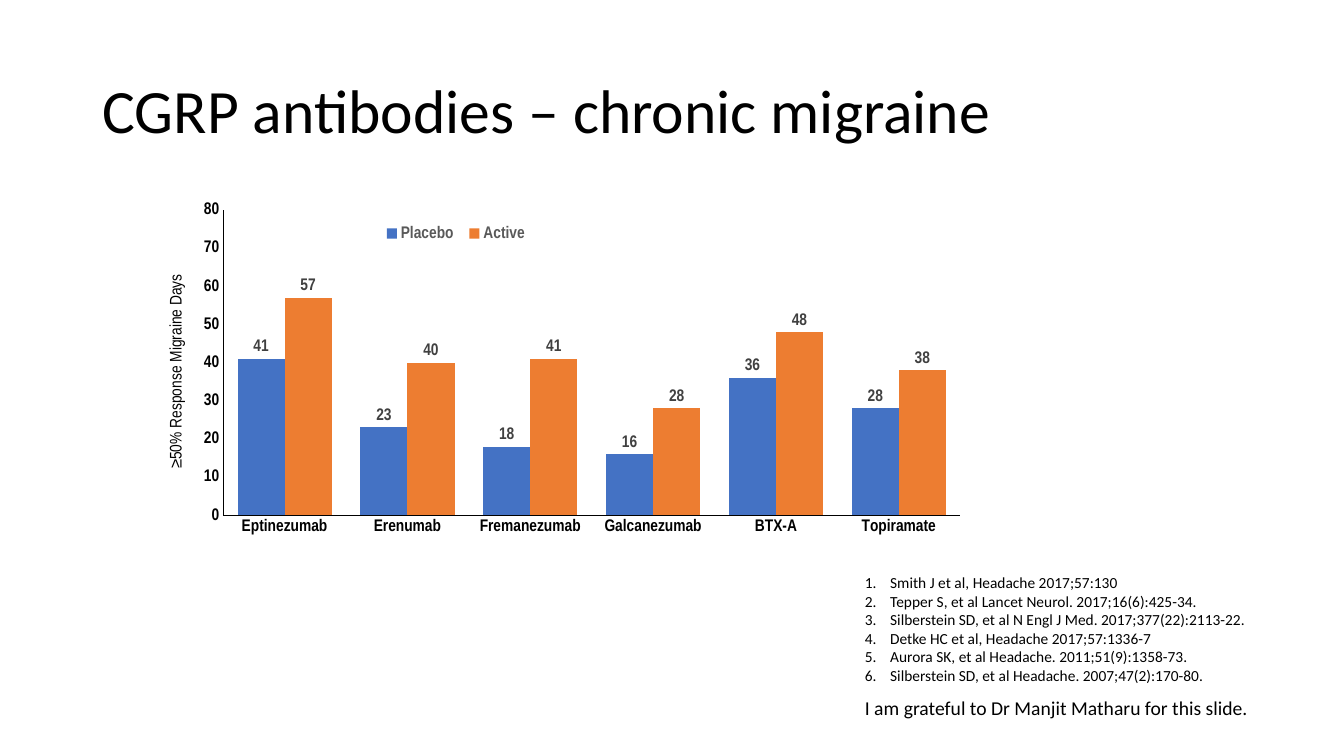
from lxml import etree
from pptx import Presentation
from pptx.chart.data import CategoryChartData
from pptx.dml.color import RGBColor
from pptx.enum.chart import XL_CHART_TYPE as ChartType
from pptx.enum.chart import XL_LABEL_POSITION as LabelPosition
from pptx.enum.chart import XL_LEGEND_POSITION as LegendPosition
from pptx.enum.chart import XL_TICK_MARK as TickMark
from pptx.enum.text import MSO_ANCHOR, MSO_AUTO_SIZE
from pptx.oxml.ns import qn
from pptx.util import Inches, Pt

RESPONSE = {
    "Eptinezumab": (41, 57),
    "Erenumab": (23, 40),
    "Fremanezumab": (18, 41),
    "Galcanezumab": (16, 28),
    "BTX-A": (36, 48),
    "Topiramate": (28, 38),
}
ARMS = {"Placebo": "4472C4", "Active": "ED7D31"}
REFERENCES = [
    "Smith J et al, Headache 2017;57:130",
    "Tepper S, et al Lancet Neurol. 2017;16(6):425-34.",
    "Silberstein SD, et al N Engl J Med. 2017;377(22):2113-22.",
    "Detke HC et al, Headache 2017;57:1336-7",
    "Aurora SK, et al Headache. 2011;51(9):1358-73.",
    "Silberstein SD, et al Headache. 2007;47(2):170-80.",
]


def color(value):
    return RGBColor.from_string(value)


def place(element, index, **fractions):
    for old in element.findall(qn("c:layout")):
        element.remove(old)
    layout = etree.Element(qn("c:layout"))
    manual = etree.SubElement(layout, qn("c:manualLayout"))
    if "w" in fractions and index == 0:
        etree.SubElement(manual, qn("c:layoutTarget")).set("val", "inner")
    for side in ("x", "y"):
        etree.SubElement(manual, qn(f"c:{side}Mode")).set("val", "edge")
    for side, fraction in fractions.items():
        etree.SubElement(manual, qn(f"c:{side}")).set("val", str(fraction))
    element.insert(index, layout)


class SlideBuilder:
    text_font = "Calibri"
    chart_font = "Arial Narrow"
    ink = "000000"

    def __init__(self, deck):
        self.slide = deck.slides.add_slide(deck.slide_layouts[6])

    def style(self, font, size, name, value=ink, bold=False):
        font.size = Pt(size)
        font.name = name
        font.bold = bold
        font.color.rgb = color(value)

    def text(self, area, lines, size, wrap=True, grow=True, numbered=False):
        box = self.slide.shapes.add_textbox(*map(Inches, area))
        frame = box.text_frame
        frame.text = "\n".join(lines)
        frame.word_wrap = wrap
        frame.auto_size = MSO_AUTO_SIZE.SHAPE_TO_FIT_TEXT if grow else MSO_AUTO_SIZE.NONE
        for para in frame.paragraphs:
            if numbered:
                self.number(para)
            for span in para.runs:
                self.style(span.font, size, self.text_font)
        return frame

    def number(self, para):
        properties = para._p.get_or_add_pPr()
        properties.set("marL", str(Inches(0.25)))
        properties.set("indent", str(Inches(-0.25)))
        etree.SubElement(properties, qn("a:buFont")).set("typeface", "+mj-lt")
        etree.SubElement(properties, qn("a:buAutoNum")).set("type", "arabicPeriod")

    def title(self, area, words):
        frame = self.text(area, [words], 44, grow=False)
        frame.vertical_anchor = MSO_ANCHOR.MIDDLE
        frame.paragraphs[0].line_spacing = 0.9

    def axis(self, axis):
        axis.has_major_gridlines = False
        axis.major_tick_mark = TickMark.NONE
        axis.minor_tick_mark = TickMark.NONE
        axis.format.line.color.rgb = color(self.ink)
        axis.format.line.width = Pt(0.75)
        self.style(axis.tick_labels.font, 12, self.chart_font, bold=True)

    def column_chart(self, area, axis_title):
        data = CategoryChartData()
        data.categories = list(RESPONSE)
        for arm, values in zip(ARMS, zip(*RESPONSE.values())):
            data.add_series(arm, values)
        chart = self.slide.shapes.add_chart(
            ChartType.COLUMN_CLUSTERED, *map(Inches, area), data
        ).chart
        self.style(chart.font, 10, self.text_font)
        chart.has_title = False
        place(chart.plots[0]._element.getparent(), 0, x=0.096, y=0.038, w=0.884, h=0.806)
        self.axis(chart.category_axis)
        self.axis(chart.value_axis)
        self.scale(chart.value_axis, axis_title)
        self.legend(chart)
        self.columns(chart.plots[0])

    def scale(self, axis, words):
        axis.minimum_scale = 0
        axis.maximum_scale = 80
        axis.major_unit = 10
        title = axis.axis_title
        title.text_frame.text = words
        span = title.text_frame.paragraphs[0].runs[0]
        self.style(span.font, 12, self.chart_font)
        place(title._element, 1, x=0.025, y=0.2)

    def legend(self, chart):
        chart.has_legend = True
        legend = chart.legend
        legend.position = LegendPosition.BOTTOM
        legend.include_in_layout = False
        self.style(legend.font, 12, self.chart_font, "595959", True)
        place(legend._element, 1, x=0.28, y=0.06, w=0.19, h=0.08)

    def columns(self, plot):
        plot.gap_width = 61
        plot.overlap = 0
        plot.vary_by_categories = False
        for series, fill in zip(plot.series, ARMS.values()):
            series.format.fill.solid()
            series.format.fill.fore_color.rgb = color(fill)
            labels = series.data_labels
            labels.show_value = True
            labels.position = LabelPosition.OUTSIDE_END
            self.style(labels.font, 12, self.chart_font, "404040", True)


def main():
    deck = Presentation()
    deck.slide_width = Inches(13.33)
    deck.slide_height = Inches(7.5)
    page = SlideBuilder(deck)
    page.title((0.92, 0.4, 11.5, 1.45), "CGRP antibodies – chronic migraine")
    page.column_chart((1.42, 1.94, 8.27, 3.76), "≥50% Response Migraine Days")
    page.text((8.48, 5.64, 4.02, 1.21), REFERENCES, 11, wrap=False, numbered=True)
    page.text(
        (8.48, 6.86, 4.17, 0.34),
        ["I am grateful to Dr Manjit Matharu for this slide."],
        14,
    )
    deck.save("out.pptx")


if __name__ == "__main__":
    main()
